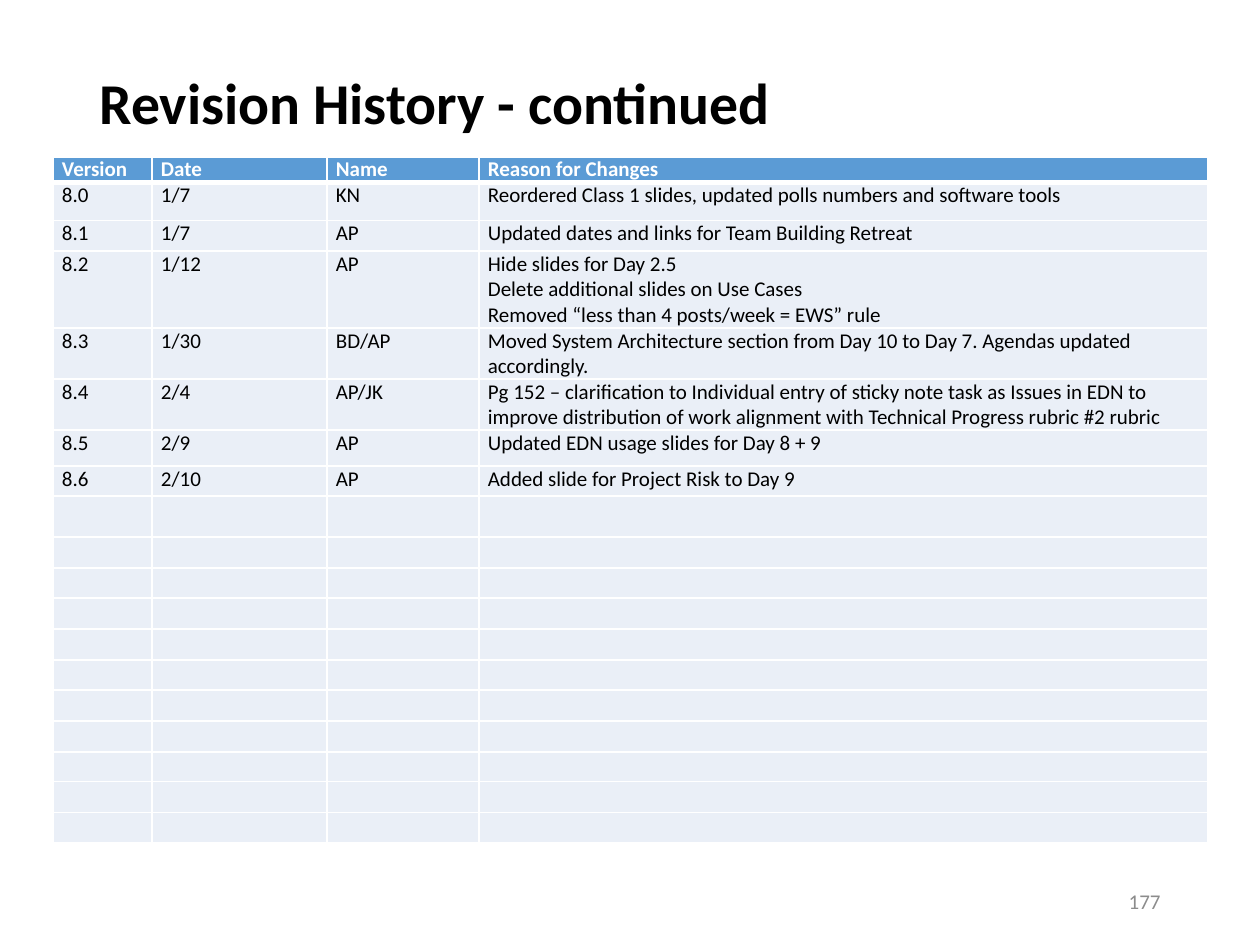
from lxml.etree import SubElement
from pptx import Presentation
from pptx.dml.color import RGBColor
from pptx.enum.text import MSO_ANCHOR, PP_ALIGN
from pptx.oxml.ns import qn
from pptx.util import Emu, Pt

EMU_PER_PX = 914400 / 126
FONT = "Calibri"
BLACK = RGBColor(0x00, 0x00, 0x00)
WHITE = RGBColor(0xFF, 0xFF, 0xFF)
GRAY = RGBColor(0x8C, 0x8C, 0x8C)
HEADER_BLUE = RGBColor(0x5B, 0x9B, 0xD5)
ROW_BLUE = RGBColor(0xEA, 0xEF, 0xF7)

COLUMN_WIDTHS = [99, 175, 152, 729]
EMPTY_ROW_HEIGHTS = [41] + [31, 30, 31] * 3 + [30]
HEADINGS = ("Version", "Date", "Name", "Reason for Changes")
REVISIONS = [
    (38, "8.0", "1/7", "KN", "Reordered Class 1 slides, updated polls numbers and software tools"),
    (31, "8.1", "1/7", "AP", "Updated dates and links for Team Building Retreat"),
    (77, "8.2", "1/12", "AP",
     "Hide slides for Day 2.5\nDelete additional slides on Use Cases\n"
     "Removed “less than 4 posts/week = EWS” rule"),
    (51, "8.3", "1/30", "BD/AP",
     "Moved System Architecture section from Day 10 to Day 7. Agendas updated accordingly."),
    (51, "8.4", "2/4", "AP/JK",
     "Pg 152 – clarification to Individual entry of sticky note task as Issues in EDN to "
     "improve distribution of work alignment with Technical Progress rubric #2 rubric"),
    (36, "8.5", "2/9", "AP", "Updated EDN usage slides for Day 8 + 9"),
    (30, "8.6", "2/10", "AP", "Added slide for Project Risk to Day 9"),
]


def px(value):
    return Emu(round(value * EMU_PER_PX))


def write_text(text_frame, text, size=12, color=BLACK, bold=False,
               align=PP_ALIGN.LEFT, line_spacing=None):
    for index, line in enumerate(text.split("\n")):
        paragraph = text_frame.paragraphs[0] if index == 0 else text_frame.add_paragraph()
        paragraph.alignment = align
        if line_spacing:
            paragraph.line_spacing = line_spacing
        if not line:
            SubElement(paragraph._p, qn("a:endParaRPr"), sz=str(size * 100))
            continue
        run = paragraph.add_run()
        run.text = line
        run.font.name = FONT
        run.font.size = Pt(size)
        run.font.bold = bold
        run.font.color.rgb = color


def add_text_box(slide, left, top, width, height, text, bottom_inset=6, **text_format):
    text_frame = slide.shapes.add_textbox(px(left), px(top), px(width), px(height)).text_frame
    text_frame.word_wrap = True
    text_frame.vertical_anchor = MSO_ANCHOR.MIDDLE
    text_frame.margin_top = px(6)
    text_frame.margin_bottom = px(bottom_inset)
    write_text(text_frame, text, **text_format)


def set_borders(cell, top=1, bottom=1):
    properties = cell._tc.get_or_add_tcPr()
    for side, width in (("L", 1), ("R", 1), ("T", top), ("B", bottom)):
        line = SubElement(properties, qn(f"a:ln{side}"), w=str(Pt(width)))
        fill = SubElement(line, qn("a:solidFill"))
        SubElement(fill, qn("a:srgbClr"), val=str(WHITE))


def fill_cell(cell, text, fill, top=1, bottom=1, **text_format):
    cell.margin_left = cell.margin_right = px(9)
    cell.margin_top = cell.margin_bottom = 0
    set_borders(cell, top, bottom)
    cell.fill.solid()
    cell.fill.fore_color.rgb = fill
    write_text(cell.text_frame, text, **text_format)


def add_revision_table(slide, left, top):
    rows = [(25, *HEADINGS), *REVISIONS]
    rows += [(height, "", "", "", "") for height in EMPTY_ROW_HEIGHTS]
    total_height = sum(row[0] for row in rows)
    table = slide.shapes.add_table(len(rows), len(COLUMN_WIDTHS), px(left), px(top),
                                   px(sum(COLUMN_WIDTHS)), px(total_height)).table
    table.horz_banding = False
    for column, width in zip(table.columns, COLUMN_WIDTHS):
        column.width = px(width)
    for index, (height, *texts) in enumerate(rows):
        table.rows[index].height = px(height)
        for cell, text in zip(table.rows[index].cells, texts):
            if index == 0:
                fill_cell(cell, text, HEADER_BLUE, bottom=3, color=WHITE, bold=True)
            else:
                fill_cell(cell, text, ROW_BLUE, top=3 if index == 1 else 1)


def main():
    presentation = Presentation()
    presentation.slide_width = px(1260)
    presentation.slide_height = px(945)
    slide = presentation.slides.add_slide(presentation.slide_layouts[6])
    add_text_box(slide, 87, 50, 1086, 183, "Revision History - continued",
                 bottom_inset=77, size=33, bold=True, line_spacing=0.9)
    add_revision_table(slide, 53, 157)
    add_text_box(slide, 890, 876, 283, 50, "177", color=GRAY, align=PP_ALIGN.RIGHT)
    presentation.save("out.pptx")


if __name__ == "__main__":
    main()
